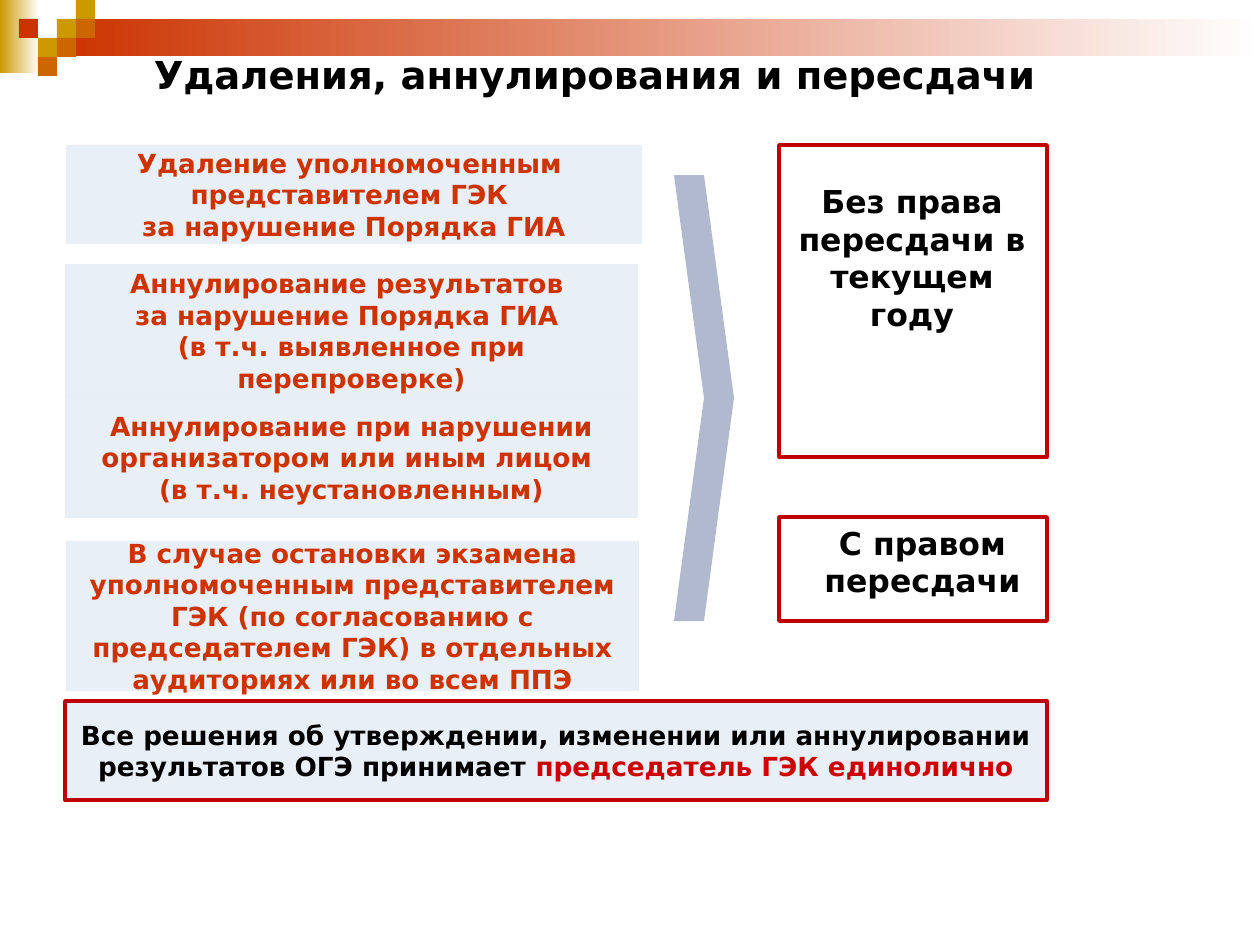
from dataclasses import dataclass

from lxml.etree import SubElement
from pptx import Presentation
from pptx.dml.color import RGBColor as RGB
from pptx.enum.shapes import MSO_SHAPE as Shape
from pptx.enum.text import MSO_ANCHOR as Anchor, PP_ALIGN as Align
from pptx.oxml.ns import qn
from pptx.util import Emu, Pt

SCALE = 914400 / 126


def px(n):
    return Emu(round(n * SCALE))


@dataclass(frozen=True)
class Theme:
    font: str = "DejaVu Sans"
    head: int = 22
    big: int = 18
    body: int = 15
    black: str = "000000"
    white: str = "FFFFFF"
    gold: str = "CC9900"
    amber: str = "CC6600"
    rust: str = "CC3300"
    red: str = "CC0000"
    edge: str = "C00000"
    pale: str = "B9CDE5"
    navy: str = "002060"
    alpha: int = 31


class Deck:
    def __init__(self, theme):
        self.theme = theme
        self.prs = Presentation()
        self.prs.slide_width, self.prs.slide_height = px(1260), px(945)
        self.slide = self.prs.slides.add_slide(self.prs.slide_layouts[6])

    def shape(self, area, fill=None, alpha=None, line=None, kind=Shape.RECTANGLE):
        item = self.slide.shapes.add_shape(kind, *map(px, area))
        item.shadow.inherit = False
        if fill:
            item.fill.solid()
            item.fill.fore_color.rgb = RGB.from_string(fill)
        else:
            item.fill.background()
        if alpha:
            tint = item._element.spPr.find(".//" + qn("a:srgbClr"))
            SubElement(tint, qn("a:alpha"), val=str(alpha * 1000))
        if line:
            item.line.color.rgb = RGB.from_string(line)
            item.line.width = Pt(2)
        else:
            item.line.fill.background()
        return item

    def fade(self, area, color):
        """Rectangle that fades to white from left to right."""
        item = self.shape(area)
        item.fill.gradient()
        item.fill.gradient_angle = 0
        for stop, tone in zip(item.fill.gradient_stops, (color, self.theme.white)):
            stop.color.rgb = RGB.from_string(tone)

    def words(self, item, paras, size, color, anchor=Anchor.MIDDLE):
        """Set centred text and return its first paragraph."""
        frame = item.text_frame
        frame.word_wrap = True
        frame.vertical_anchor = anchor
        frame.text = "\n".join(paras)
        for para in frame.paragraphs:
            para.alignment = Align.CENTER
            for run in para.runs:
                self.style(run, size, color)
        return frame.paragraphs[0]

    def style(self, run, size, color):
        font = run.font
        font.name, font.size, font.bold = self.theme.font, Pt(size), True
        font.color.rgb = RGB.from_string(color)

    def panel(self, area, paras, color, line=None):
        """Pale see-through box with body text."""
        t = self.theme
        item = self.shape(area, t.pale, t.alpha, line)
        return self.words(item, paras, t.body, color)

    def label(self, area, text, size, anchor=Anchor.MIDDLE):
        item = self.slide.shapes.add_textbox(*map(px, area))
        return self.words(item, [text], size, self.theme.black, anchor)


def main():
    t = Theme()
    deck = Deck(t)

    # Corner ornament
    deck.fade((0, 0, 39, 73), t.gold)
    deck.fade((57, 19, 1203, 37), t.rust)
    unit = 19
    tiles = [(3, 1, t.gold), (4, 0, t.gold), (4, 1, t.amber), (2, 2, t.gold),
             (1, 1, t.rust), (3, 2, t.amber), (2, 3, t.amber)]
    for col, row, color in tiles:
        deck.shape((col * unit, row * unit, unit, unit), color)

    title = deck.label((113, 45, 963, 69), "Удаления, аннулирования и пересдачи",
                       t.head, Anchor.TOP)
    title.space_before = Pt(t.head * 0.2)

    # Cases on the left
    cases = [
        ((66, 145, 576, 99), ["Удаление уполномоченным ", "представителем ГЭК ",
                              "за нарушение Порядка ГИА"]),
        ((65, 397, 573, 121), ["Аннулирование при нарушении организатором "
                               "или иным лицом ", "(в т.ч. неустановленным)"]),
        ((65, 264, 573, 133), ["Аннулирование результатов ",
                               "за нарушение Порядка ГИА ",
                               "(в т.ч. выявленное при перепроверке)"]),
        ((66, 541, 573, 150), ["В случае остановки экзамена уполномоченным "
                               "представителем ГЭК (по согласованию с "
                               "председателем ГЭК) в отдельных аудиториях "
                               "или во всем ППЭ"]),
    ]
    for area, paras in cases:
        deck.panel(area, paras, t.rust)

    deck.shape((674, 175, 60, 446), t.navy, t.alpha, kind=Shape.CHEVRON)

    # Outcomes on the right
    outcomes = [
        ((779, 145, 268, 312), (778, 175, 268, 165),
         "Без права пересдачи в текущем году"),
        ((779, 517, 268, 104), (789, 517, 267, 89), "С правом пересдачи"),
    ]
    for area, place, text in outcomes:
        deck.shape(area, line=t.edge)
        deck.label(place, text, t.big)

    note = deck.panel((65, 701, 982, 99),
                      ["Все решения об утверждении, изменении или аннулировании "
                       "результатов ОГЭ принимает "], t.black, t.edge)
    run = note.add_run()
    run.text = "председатель ГЭК единолично"
    deck.style(run, t.body, t.red)

    deck.prs.save("out.pptx")


if __name__ == "__main__":
    main()
